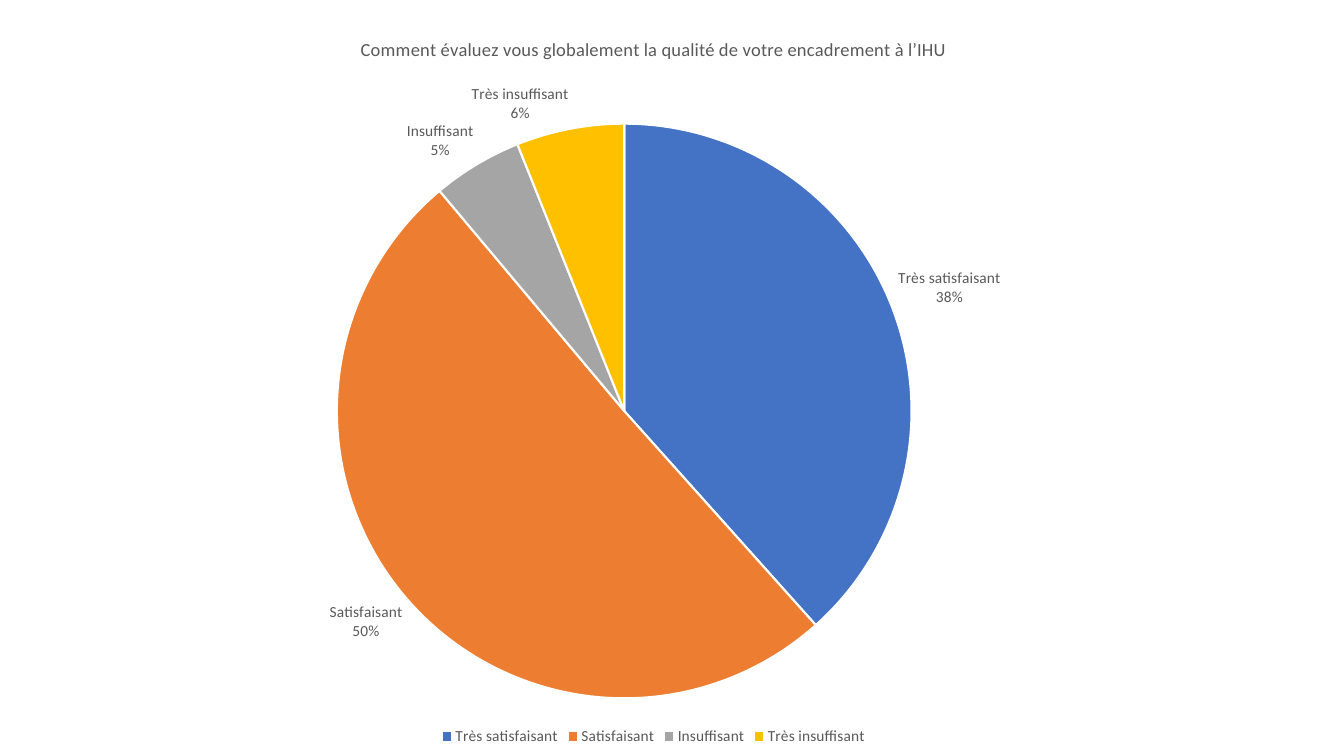
from lxml.etree import SubElement
from pptx import Presentation
from pptx.chart.data import CategoryChartData
from pptx.dml.color import RGBColor
from pptx.enum.chart import XL_CHART_TYPE, XL_LABEL_POSITION, XL_LEGEND_POSITION
from pptx.oxml import parse_xml
from pptx.oxml.ns import nsdecls, qn
from pptx.util import Pt

WHITE = RGBColor(0xFF, 0xFF, 0xFF)
GRAY_TEXT = RGBColor(0x59, 0x59, 0x59)
BLUE = RGBColor(0x44, 0x72, 0xC4)
ORANGE = RGBColor(0xED, 0x7D, 0x31)
GRAY = RGBColor(0xA5, 0xA5, 0xA5)
YELLOW = RGBColor(0xFF, 0xC0, 0x00)

QUESTION = "Comment évaluez vous globalement la qualité de votre encadrement à l’IHU"
RATINGS = [
    ("Très satisfaisant", 38, BLUE),
    ("Satisfaisant", 50, ORANGE),
    ("Insuffisant", 5, GRAY),
    ("Très insuffisant", 6, YELLOW),
]


def format_font(font, size=11, color=GRAY_TEXT, name="Calibri"):
    font.name = name
    font.size = Pt(size)
    font.bold = False
    font.color.rgb = color


class SurveySlide:
    """Holds the deck, its current page and the chart style."""

    def __init__(self):
        self.deck = Presentation()
        self.deck.slide_width, self.deck.slide_height = Pt(960), Pt(540)
        self.page = self.deck.slides.add_slide(self.deck.slide_layouts[6])

    def add_pie(self, ratings, left, top, width, height):
        data = CategoryChartData()
        data.categories = [name for name, _, _ in ratings]
        data.add_series("Series 1", [share for _, share, _ in ratings])
        frame = self.page.shapes.add_chart(
            XL_CHART_TYPE.PIE, Pt(left), Pt(top), Pt(width), Pt(height), data)
        chart = frame.chart
        format_font(chart.font)
        plot = chart.plots[0]
        plot.vary_by_categories = True
        for index, (_, _, color) in enumerate(ratings):
            slice_format = plot.series[0].points[index].format
            slice_format.fill.solid()
            slice_format.fill.fore_color.rgb = color
            slice_format.line.color.rgb = WHITE
            slice_format.line.width = Pt(1.5)
        return chart

    def add_title(self, chart, text):
        chart.has_title = True
        chart.chart_title.include_in_layout = False
        para = chart.chart_title.text_frame.paragraphs[0]
        span = para.add_run()
        span.text = text
        format_font(span.font, size=13.2)

    def add_labels(self, chart):
        labels = chart.plots[0].series[0].data_labels
        labels.show_category_name = True
        labels.show_value = True
        labels.show_percentage = False
        labels.show_legend_key = False
        labels.number_format = '0"%"'
        labels.number_format_is_linked = False
        labels.position = XL_LABEL_POSITION.OUTSIDE_END
        format_font(labels.font)
        element = chart.plots[0].series[0]._element.find(qn("c:dLbls"))
        separator = SubElement(element, qn("c:separator"))
        separator.text = "\n"
        element.find(qn("c:showBubbleSize")).addnext(separator) \
            if element.find(qn("c:showBubbleSize")) is not None \
            else element.find(qn("c:showPercent")).addnext(separator)

    def add_legend(self, chart):
        chart.has_legend = True
        chart.legend.position = XL_LEGEND_POSITION.BOTTOM
        chart.legend.include_in_layout = False
        format_font(chart.legend.font)

    def place_plot(self, chart, x, y, w, h):
        area = chart._chartSpace.chart.plotArea
        for old in area.findall(qn("c:layout")):
            area.remove(old)
        modes = '<c:layoutTarget val="inner"/><c:xMode val="edge"/><c:yMode val="edge"/>'
        sizes = "".join(f'<c:{key} val="{value}"/>'
                        for key, value in zip("xywh", (x, y, w, h)))
        area.insert(0, parse_xml(
            f'<c:layout {nsdecls("c")}><c:manualLayout>{modes}{sizes}'
            "</c:manualLayout></c:layout>"))


def main():
    slide = SurveySlide()
    chart = slide.add_pie(RATINGS, left=46.8, top=9.4, width=840.2, height=526.3)
    slide.add_title(chart, QUESTION)
    slide.add_labels(chart)
    slide.add_legend(chart)
    slide.place_plot(chart, x=0.23, y=0.15, w=0.49, h=0.78)
    slide.deck.save("out.pptx")


if __name__ == "__main__":
    main()
